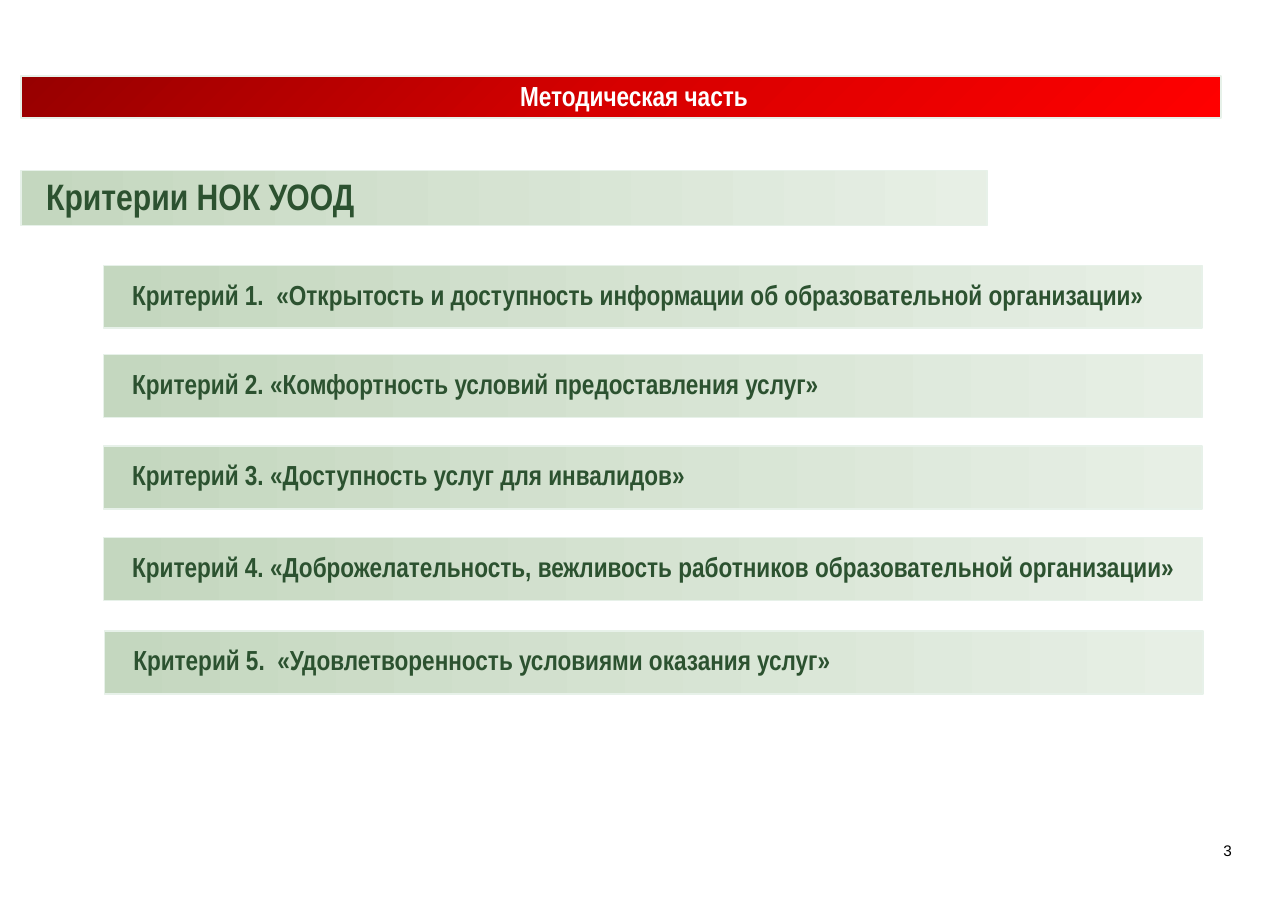
from copy import deepcopy

from pptx import Presentation
from pptx.dml.color import RGBColor
from pptx.enum.shapes import MSO_SHAPE as SHAPE
from pptx.enum.text import MSO_ANCHOR as ANCHOR, PP_ALIGN as ALIGN
from pptx.oxml.ns import qn
from pptx.util import Pt

PX = 9144  # 100 px to the inch

THEME = {
    "green": ["C4D7BF", "E7EFE5"],
    "red": ["970000", "D70000", "FF0000"],
    "outline": "E7F1E9",
    "dark_green": "2C5230",
    "white": "FFFFFF",
    "black": "000000",
    "font": "Arial Narrow",
    "number_font": "Arial",
    "heading": 24,
    "body": 18,
    "number": 10,
}

prs = Presentation()
prs.slide_width, prs.slide_height = 1169 * PX, 827 * PX
s = prs.slides.add_slide(prs.slide_layouts[6])


def add_text(shapes, box, text, font, size, color, align, inset=(0, 0)):
    tb = shapes.add_textbox(*(v * PX for v in box))
    tf = tb.text_frame
    tf.word_wrap = True
    tf.margin_left = tf.margin_right = inset[0] * PX
    tf.margin_top = tf.margin_bottom = inset[1] * PX
    p = tf.paragraphs[0]
    p.text = text
    p.alignment = align
    p.font.name, p.font.size = font, Pt(size)
    p.font.color.rgb = RGBColor.from_string(color)
    return tf


def add_bar(box, text_box, text, stops, angle, size, color, align=ALIGN.LEFT):
    shapes = s.shapes.add_group_shape().shapes
    sp = shapes.add_shape(SHAPE.RECTANGLE, *(v * PX for v in box))
    sp.shadow.inherit = False
    sp.line.color.rgb = RGBColor.from_string(THEME["outline"])
    sp.line.width = Pt(1)

    # Gradient with evenly spaced stops
    sp.fill.gradient()
    sp.fill.gradient_angle = angle
    gs_list = sp._element.spPr.find(".//" + qn("a:gsLst"))
    while len(gs_list) < len(stops):
        gs_list.append(deepcopy(gs_list[-1]))
    for i, (stop, rgb) in enumerate(zip(sp.fill.gradient_stops, stops)):
        stop.position = i / (len(stops) - 1)
        stop.color.rgb = RGBColor.from_string(rgb)

    # Label over the bar
    tf = add_text(shapes, text_box, text, THEME["font"], size, color, align)
    tf.vertical_anchor = ANCHOR.MIDDLE
    p = tf.paragraphs[0]
    p.font.bold = True
    p.line_spacing = 0.95


# Slide number
add_text(s.shapes, (856, 758, 273, 57), "3", THEME["number_font"],
         THEME["number"], THEME["black"], ALIGN.RIGHT, inset=(11, 6))

# Section heading
add_bar((19, 155, 877, 50), (42, 155, 853, 50), "Критерии НОК УООД",
        THEME["green"], 0, THEME["heading"], THEME["dark_green"])

# Title band
add_bar((19, 69, 1089, 38), (109, 72, 933, 33), "Методическая часть",
        THEME["red"], 315, THEME["body"], THEME["white"], ALIGN.CENTER)

# Criteria: left, top, text
criteria = [
    (94, 241, "Критерий 1.  «Открытость и доступность информации об образовательной организации»"),
    (94, 322, "Критерий 2. «Комфортность условий предоставления услуг»"),
    (94, 405, "Критерий 3. «Доступность услуг для инвалидов»"),
    (94, 488, "Критерий 4. «Доброжелательность, вежливость работников образовательной организации»"),
    (95, 573, "Критерий 5.  «Удовлетворенность условиями оказания услуг»"),
]
for left, top, text in criteria:
    add_bar((left, top, 997, 57), (left + 26, top, 970, 55), text,
            THEME["green"], 0, THEME["body"], THEME["dark_green"])

prs.save("out.pptx")
